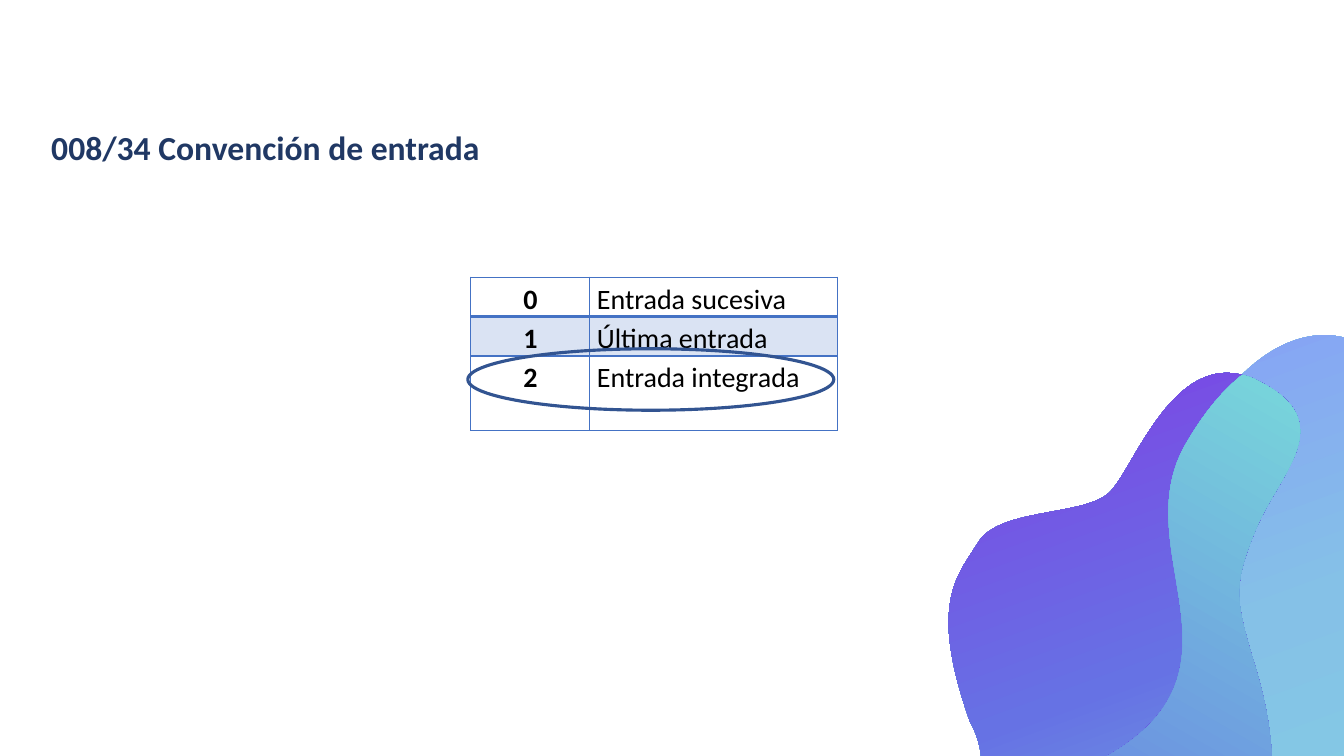
from math import cos, radians, sin

from lxml import etree
from pptx import Presentation
from pptx.dml.color import RGBColor as RGB
from pptx.enum.shapes import MSO_SHAPE as SHAPE
from pptx.enum.text import PP_ALIGN as ALIGN
from pptx.oxml import parse_xml
from pptx.oxml.ns import nsdecls, qn
from pptx.util import Inches, Pt

TITLE = "008/34 Convención de entrada"
ROWS = [("0", "Entrada sucesiva"), ("1", "Última entrada"), ("2", "Entrada integrada")]
COLS = [1.18, 2.46]
HIGHS = [0.36, 0.36, 0.74]
COLORS = {"title": "203864", "text": "000000", "band": "DAE3F3",
          "edge": "4472C4", "ring": "325491"}
TURN = 52.2

# Each wave: frame, gradient stops, angle on the slide, start point,
# then cubic curves (two handles, end)
WAVES = [
    ((9.44, 3.45, 5.02, 6.67),
     [(0, "80DEDE"), (54, "85C1E7"), (100, "878CFF")], 250, (10.64, 7.59), [
        (12.88, 6.72, 11.21, 5.42, 11.9, 4.27), (12.58, 3.11, 13.36, 3.25, 13.58, 3.49),
        (13.8, 3.72, 13.84, 3.96, 13.51, 4.35), (13.18, 4.73, 13.86, 5.47, 14.32, 5.97),
        (14.78, 6.48, 14.96, 7.62, 13.85, 7.84), (12.73, 8.06, 12.79, 8.05, 12.25, 8.95),
        (11.71, 9.84, 11.07, 9.81, 11.07, 9.81), (11.07, 9.81, 9.99, 9.69, 9.85, 8.81),
        (9.71, 7.92, 10.64, 7.59, 10.64, 7.59)]),
    ((8.84, 3.68, 5.07, 6.23),
     [(0, "7CEFD8"), (51, "6672E4"), (100, "882BE5")], 250, (9.4, 8.95), [
        (9.4, 8.95, 9.78, 9.82, 11.42, 9.26), (13.05, 8.7, 12.6, 7.09, 12.42, 6.52),
        (12.25, 5.94, 12.23, 5.79, 12.46, 5.24), (12.69, 4.69, 13.3, 4.19, 12.48, 3.78),
        (11.66, 3.37, 11.25, 4.66, 11, 4.89), (10.75, 5.12, 9.93, 5.04, 9.71, 5.37),
        (9.5, 5.71, 9.2, 5.97, 9.62, 7.16), (9.62, 7.16, 9.97, 7.7, 9.46, 8.32),
        (9.46, 8.32, 9.19, 8.7, 9.4, 8.95)]),
    ((9.54, 4.02, 4.38, 5.86),
     [(0, "882BE5"), (19, "6672E4"), (100, "7CEFD8")], 300, (11.42, 9.26), [
        (10.68, 9.51, 10.19, 9.47, 9.89, 9.35), (9.81, 9.24, 9.75, 9.1, 9.72, 8.93),
        (9.58, 8.04, 10.51, 7.72, 10.51, 7.72), (12.75, 6.85, 11.08, 5.54, 11.77, 4.39),
        (11.95, 4.08, 12.14, 3.86, 12.32, 3.72), (12.37, 3.73, 12.43, 3.75, 12.48, 3.78),
        (13.3, 4.19, 12.69, 4.69, 12.46, 5.24), (12.23, 5.79, 12.25, 5.94, 12.42, 6.52),
        (12.6, 7.09, 13.05, 8.7, 11.42, 9.26)]),
]


def local(x, y, box):
    """Slide point as a point in the frame before its turn."""
    left, top, width, height = box
    dx, dy = x - left - width / 2, y - top - height / 2
    c, s = cos(radians(TURN)), sin(radians(TURN))
    return (Inches(dx * c + dy * s + width / 2), Inches(dy * c - dx * s + height / 2))


def add_wave(shapes, box, start, curves):
    """Closed freeform with curved sides, turned in its frame."""
    pen = shapes.build_freeform(*local(*start, box))
    pen.add_line_segments([local(*curve[4:], box) for curve in curves], close=True)
    wave = pen.convert_to_shape()
    wave.left, wave.top, wave.width, wave.height = map(Inches, box)
    wave.rotation = TURN

    outline = wave._element.spPr.find(".//" + qn("a:pathLst"))[0]
    outline.set("w", str(wave.width))
    outline.set("h", str(wave.height))
    for part in list(outline):
        outline.remove(part)
    moves = [("a:moveTo", start)] + [("a:cubicBezTo", curve) for curve in curves]
    for tag, spots in moves:
        move = etree.SubElement(outline, qn(tag))
        for x, y in zip(spots[::2], spots[1::2]):
            px, py = local(x, y, box)
            etree.SubElement(move, qn("a:pt"), x=str(px), y=str(py))
    etree.SubElement(outline, qn("a:close"))
    return wave


def shade(shape, stops, angle):
    """Linear gradient with any number of stops."""
    marks = "".join(f'<a:gs pos="{pos * 1000}"><a:srgbClr val="{color}"/></a:gs>'
                    for pos, color in stops)
    turn = round((angle - TURN) * 60000)
    grad = parse_xml(f'<a:gradFill {nsdecls("a")} rotWithShape="1"><a:gsLst>{marks}</a:gsLst>'
                     f'<a:lin ang="{turn}" scaled="0"/></a:gradFill>')
    shape.fill.background()
    blank = shape._element.spPr.find(qn("a:noFill"))
    blank.getparent().replace(blank, grad)


def frame(cell, row):
    """Cell borders; the line under the first row is thicker."""
    props = cell._tc.get_or_add_tcPr()
    widths = {"L": 1, "R": 1, "T": 1, "B": 2 if row == 0 else 1}
    for spot, (side, width) in enumerate(widths.items()):
        line = etree.Element(qn("a:ln" + side), w=str(Pt(width)))
        fill = etree.SubElement(line, qn("a:solidFill"))
        etree.SubElement(fill, qn("a:srgbClr"), val=COLORS["edge"])
        props.insert(spot, line)


def write(para, text, size, color, bold, align):
    para.text = text
    para.alignment = align
    para.line_spacing = 1.15
    font = para.font
    font.name, font.size, font.bold = "Calibri", Pt(size), bold
    font.color.rgb = RGB.from_string(COLORS[color])


deck = Presentation()
deck.slide_width, deck.slide_height = Inches(13.33), Inches(7.5)
slide = deck.slides.add_slide(deck.slide_layouts[6])
shapes = slide.shapes

# Waves in the corner
for box, stops, angle, start, curves in WAVES:
    wave = add_wave(shapes, box, start, curves)
    wave.shadow.inherit = False
    wave.line.fill.background()
    shade(wave, stops, angle)

# Code table
table = shapes.add_table(len(ROWS), len(COLS), Inches(4.67), Inches(2.75),
                         Inches(sum(COLS)), Inches(sum(HIGHS))).table
table.first_row = table.horz_banding = False
for column, width in zip(table.columns, COLS):
    column.width = Inches(width)
for r, (texts, high) in enumerate(zip(ROWS, HIGHS)):
    table.rows[r].height = Inches(high)
    for c, text in enumerate(texts):
        cell = table.cell(r, c)
        cell.margin_left = cell.margin_right = Inches(0.07)
        cell.margin_top = cell.margin_bottom = 0
        if r == 1:
            cell.fill.solid()
            cell.fill.fore_color.rgb = RGB.from_string(COLORS["band"])
        else:
            cell.fill.background()
        frame(cell, r)
        write(cell.text_frame.paragraphs[0], text, 20, "text", c == 0,
              ALIGN.JUSTIFY if c else ALIGN.CENTER)

# Title
title = shapes.add_textbox(Inches(0.41), Inches(1.15), Inches(4.49), Inches(0.54))
title.text_frame.word_wrap = False
write(title.text_frame.paragraphs[0], TITLE, 24, "title", True, ALIGN.JUSTIFY)

# Ring around the chosen code
ring = shapes.add_shape(SHAPE.OVAL, Inches(4.64), Inches(3.46), Inches(3.63), Inches(0.61))
ring.shadow.inherit = False
ring.fill.background()
ring.line.color.rgb = RGB.from_string(COLORS["ring"])
ring.line.width = Pt(2.25)

deck.save("out.pptx")
